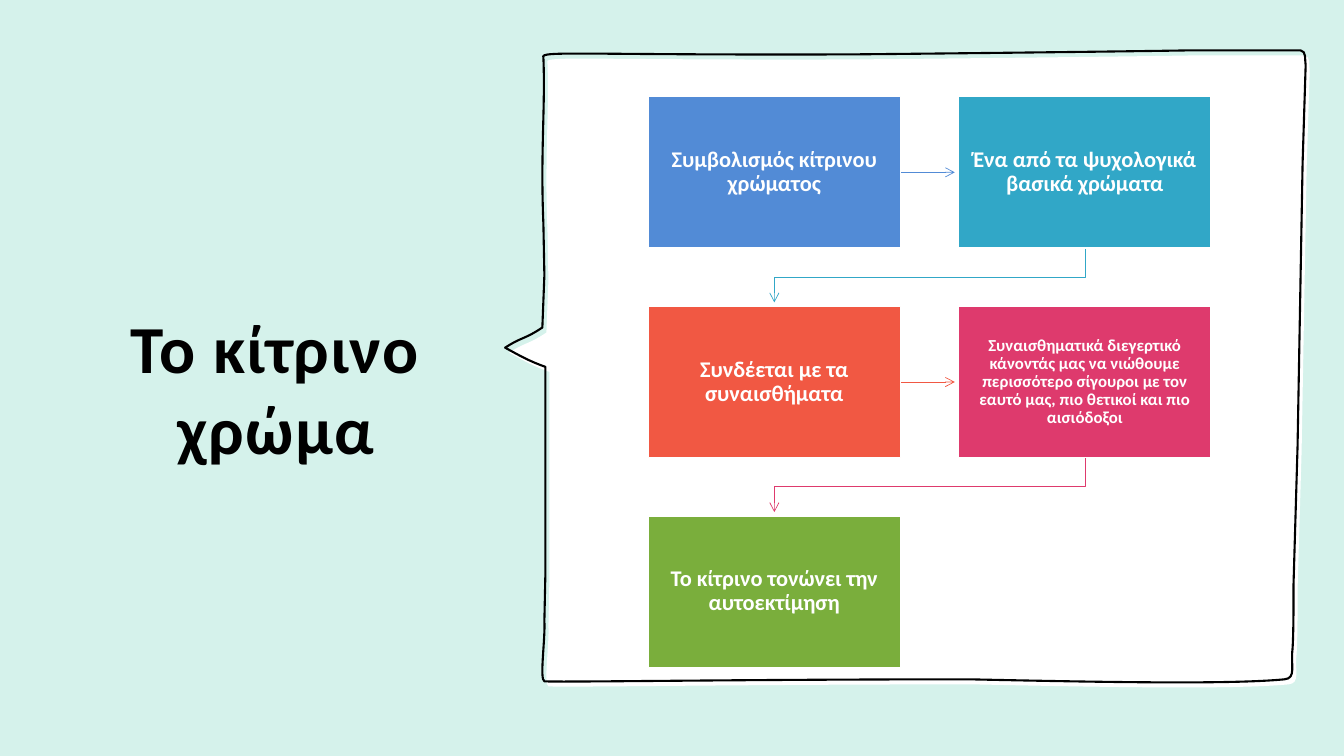
"""Build the slide about the colour yellow: a title and a speech bubble holding a five-step flow."""
from lxml import etree
from pptx import Presentation
from pptx import util as u
from pptx.dml.color import RGBColor
from pptx.enum import shapes, text
from pptx.oxml.ns import qn

MINT = RGBColor(0xD5, 0xF2, 0xEB)
WHITE = RGBColor(0xFF, 0xFF, 0xFF)
BLACK = RGBColor(0x00, 0x00, 0x00)
BLUE = RGBColor(0x52, 0x8B, 0xD6)
TEAL = RGBColor(0x31, 0xA7, 0xC7)
ORANGE = RGBColor(0xF1, 0x58, 0x43)
PINK = RGBColor(0xDE, 0x3A, 0x6D)
GREEN = RGBColor(0x7A, 0xAE, 0x3C)
FONT = "Calibri"

TITLE = "Το κίτρινο χρώμα"
STEPS = [
    ("Συμβολισμός κίτρινου χρώματος", BLUE, 16),
    ("Ένα από τα ψυχολογικά βασικά χρώματα", TEAL, 16),
    ("Συνδέεται με τα συναισθήματα", ORANGE, 16),
    ("Συναισθηματικά διεγερτικό κάνοντάς μας να νιώθουμε περισσότερο σίγουροι "
     "με τον εαυτό μας, πιο θετικοί και πιο αισιόδοξοι", PINK, 12),
    ("Το κίτρινο τονώνει την αυτοεκτίμηση", GREEN, 16),
]

COLUMNS = 2
GRID_LEFT, GRID_TOP = 6.43, 0.96
COLUMN_STEP, ROW_STEP = 3.08, 2.08
BOX_WIDTH, BOX_HEIGHT = 2.5, 1.5
ARROW_LENGTH, ARROW_FRAME, ARROW_BEND = 0.54, 0.1, 0.29

BUBBLE_START = (12.92, 1.62)
BUBBLE_SEGMENTS = [
    [(12.95, 0.65)],
    [(12.94, 0.59), (12.96, 0.51), (12.9, 0.5)],
    [(11.8, 0.5)],
    [(11.25, 0.51), (9.53, 0.53), (8.46, 0.54)],
    [(5.77, 0.55), (5.35, 0.5), (5.39, 0.57)],
    [(5.41, 1.07), (5.36, 1.5), (5.39, 2.22)],
    [(5.4, 2.73)],
    [(5.38, 3.25)],
    [(5.2, 3.37), (5.18, 3.34), (5.01, 3.45)],
    [(5.14, 3.52), (5.24, 3.58), (5.41, 3.64)],
    [(5.41, 3.69), (5.41, 5.02), (5.41, 5.21)],
    [(5.41, 5.68)],
    [(5.4, 6.16)],
    [(5.41, 6.34), (5.35, 6.74), (5.4, 6.76)],
    [(5.66, 6.77), (7.34, 6.74), (9.62, 6.74)],
    [(11, 6.77), (12.21, 6.79), (12.74, 6.74)],
    [(12.86, 6.73), (12.8, 6.6), (12.82, 6.44)],
    [(12.83, 6.29), (12.83, 6.01), (12.83, 5.79)],
    [(12.87, 4.43)],
    [BUBBLE_START],
]
BUBBLE_FILL_OFFSET = (0.04, 0.05)


def add_outline(slide, points, close):
    """Draw a freeform through points given in inches."""
    places = [(u.Inches(x), u.Inches(y)) for x, y in points]
    builder = slide.shapes.build_freeform(*places[0])
    builder.add_line_segments(places[1:], close=close)
    shape = builder.convert_to_shape()
    shape.fill.background()
    shape.line.fill.background()
    shape.shadow.inherit = False
    return shape


def add_bubble_outline(slide, offset=(0, 0)):
    """Draw the bubble through its segment ends, then bend the curved segments."""
    shift_x, shift_y = offset
    ends = [BUBBLE_START] + [segment[-1] for segment in BUBBLE_SEGMENTS]
    shape = add_outline(slide, [(x + shift_x, y + shift_y) for x, y in ends], True)
    sides = list(shape._element.iter(qn("a:lnTo")))
    for side, segment in zip(sides, BUBBLE_SEGMENTS):
        if len(segment) == 3:
            side.tag = qn("a:cubicBezTo")
            for index, (x, y) in enumerate(segment[:-1]):
                point = etree.Element(qn("a:pt"))
                point.set("x", str(u.Inches(x + shift_x) - shape.left))
                point.set("y", str(u.Inches(y + shift_y) - shape.top))
                side.insert(index, point)
    return shape


def add_bubble(slide):
    """Draw the white bubble and its slightly shifted black outline."""
    body = add_bubble_outline(slide, BUBBLE_FILL_OFFSET)
    body.fill.solid()
    body.fill.fore_color.rgb = WHITE
    border = add_bubble_outline(slide)
    border.line.color.rgb = BLACK
    border.line.width = u.Pt(1.5)


def write(shape, words, size, color):
    """Put one bold, centred paragraph in the shape."""
    frame = shape.text_frame
    frame.word_wrap = True
    frame.vertical_anchor = text.MSO_ANCHOR.MIDDLE
    paragraph = frame.paragraphs[0]
    paragraph.alignment = text.PP_ALIGN.CENTER
    run = paragraph.add_run()
    run.text = words
    run.font.name = FONT
    run.font.size = u.Pt(size)
    run.font.bold = True
    run.font.color.rgb = color
    return paragraph


def add_title(slide):
    """Write the slide title at the left."""
    box = slide.shapes.add_textbox(u.Inches(0.79), u.Inches(1.75), u.Inches(3.89), u.Inches(4.18))
    paragraph = write(box, TITLE, 48, BLACK)
    paragraph.runs[0].font._element.set("spc", "100")


def add_step(slide, left, top, words, color, size):
    """Draw one box of the flow."""
    box = slide.shapes.add_shape(
        shapes.MSO_SHAPE.RECTANGLE,
        u.Inches(left), u.Inches(top), u.Inches(BOX_WIDTH), u.Inches(BOX_HEIGHT))
    box.shadow.inherit = False
    box.fill.solid()
    box.fill.fore_color.rgb = color
    box.line.color.rgb = WHITE
    box.line.width = u.Pt(1)
    frame = box.text_frame
    frame.margin_left = frame.margin_right = u.Inches(0.12)
    frame.margin_top = frame.margin_bottom = u.Inches(0.13)
    write(box, words, size, WHITE).line_spacing = 0.9


def add_straight_arrow(slide, start, y):
    """Draw a level line centred in a frame of fixed height."""
    arrow = add_outline(slide, [(start, y), (start + ARROW_LENGTH, y)], False)
    arrow.top = u.Inches(y - ARROW_FRAME / 2)
    arrow.height = u.Inches(ARROW_FRAME)
    for outline in arrow._element.iter(qn("a:path")):
        outline.set("h", str(u.Inches(ARROW_FRAME)))
    for point in arrow._element.iter(qn("a:pt")):
        point.set("y", str(u.Inches(ARROW_FRAME / 2)))
    return arrow


def add_arrow(slide, left, top, column, color):
    """Lead from a box to the next one: straight in a row, bent to the next row."""
    if column < COLUMNS - 1:
        arrow = add_straight_arrow(slide, left + BOX_WIDTH, top + BOX_HEIGHT / 2)
    else:
        start, y = left + BOX_WIDTH / 2, top + BOX_HEIGHT
        end, bend = GRID_LEFT + BOX_WIDTH / 2, y + ARROW_BEND
        arrow = add_outline(
            slide, [(start, y), (start, bend), (end, bend), (end, y + ARROW_LENGTH)], False)
    arrow.line.color.rgb = color
    arrow.line.width = u.Pt(0.5)
    line = arrow._element.spPr.find(qn("a:ln"))
    etree.SubElement(line, qn("a:tailEnd"), type="arrow")


def main():
    """Assemble and save the slide."""
    presentation = Presentation()
    presentation.slide_width = u.Inches(13.33)
    presentation.slide_height = u.Inches(7.5)
    slide = presentation.slides.add_slide(presentation.slide_layouts[6])
    slide.background.fill.solid()
    slide.background.fill.fore_color.rgb = MINT
    add_title(slide)
    add_bubble(slide)
    for index, (words, color, size) in enumerate(STEPS):
        row, column = divmod(index, COLUMNS)
        left, top = GRID_LEFT + column * COLUMN_STEP, GRID_TOP + row * ROW_STEP
        if index < len(STEPS) - 1:
            add_arrow(slide, left, top, column, color)
        add_step(slide, left, top, words, color, size)
    presentation.save("out.pptx")


if __name__ == "__main__":
    main()
